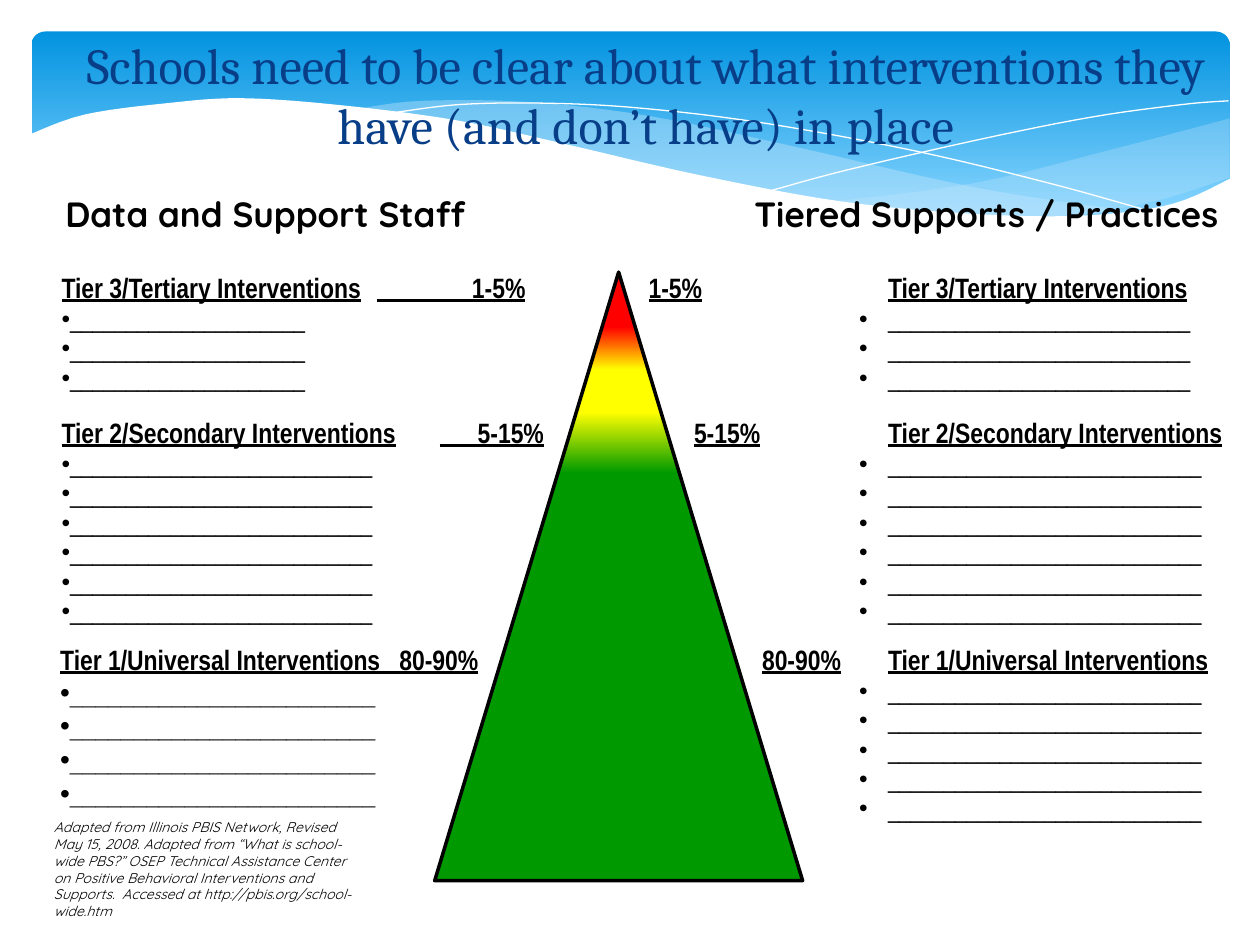
import pptx
import pptx.dml.color
import pptx.enum.shapes
import pptx.enum.text
import pptx.oxml
import pptx.oxml.ns
import pptx.util

COLS, ROWS = 100, 75
ALIGN = pptx.enum.text.PP_ALIGN
KIND = pptx.enum.shapes.MSO_SHAPE
DARK, PALE, WHITE = "000000", "C6E7FC", "FFFFFF"
RED, GOLD, GREEN = "FF0000", "FFFF00", "009900"

deck = pptx.Presentation()
deck.slide_width = pptx.util.Inches(10)
deck.slide_height = pptx.util.Inches(7.5)
UNIT = deck.slide_width / COLS


def emu(*cells):
    """Turn grid cells into slide lengths."""
    return [pptx.util.Emu(round(cell * UNIT)) for cell in cells]


def tint(code):
    """Turn a hex string into a colour."""
    return pptx.dml.color.RGBColor.from_string(code)


def node(home, tag, **attrs):
    """Append a drawing element and return it."""
    item = home.makeelement(pptx.oxml.ns.qn("a:" + tag), attrs)
    home.append(item)
    return item


def paint(shape, fill=None, line=None, width=0, clear=None):
    """Set fill, line and opacity; a tuple of stops is a downward blend."""
    shape.shadow.inherit = False
    if fill is None:
        shape.fill.background()
    elif isinstance(fill, tuple):
        shape.fill.gradient()
        shape.fill.gradient_angle = 270
        for stop, (place, code) in zip(shape.fill.gradient_stops, fill):
            stop.color.rgb = tint(code)
            stop.position = place
    else:
        shape.fill.solid()
        shape.fill.fore_color.rgb = tint(fill)
    if clear:
        code = shape.fill._xPr.find(".//" + pptx.oxml.ns.qn("a:srgbClr"))
        node(code, "alpha", val=str(clear * 1000))
    if line:
        shape.line.color.rgb = tint(line)
        shape.line.width = pptx.util.Pt(width)
    else:
        shape.line.fill.background()
    return shape


def outline(slide, knots, close=True, **look):
    """Draw a painted outline through grid points."""
    spots = [emu(*knot) for knot in knots]
    pen = slide.shapes.build_freeform(*spots[0], scale=1.0)
    pen.add_line_segments(spots[1:], close=close)
    return paint(pen.convert_to_shape(), **look)


def curve(knots, steps=6):
    """Return points on a smooth curve through the knots."""
    ends = [knots[0], *knots, knots[-1]]
    spots = [knots[0]]
    for a, b, c, d in zip(ends, ends[1:], ends[2:], ends[3:]):
        for step in range(1, steps + 1):
            t = step / steps
            spots.append(tuple(
                q + t * ((r - p) + t * ((2 * p - 5 * q + 4 * r - s)
                                        + t * (3 * q - p - 3 * r + s))) / 2
                for p, q, r, s in zip(a, b, c, d)))
    return spots


def write(frame, words, size=16, face="Arial Narrow", ink=DARK, bold=False,
          under=False, slant=False, align=ALIGN.LEFT, lead=0, dot=None, tabs=()):
    """Add one formatted paragraph to a text frame."""
    para = frame.paragraphs[0]
    if para.runs:
        para = frame.add_paragraph()
    para.alignment = align
    para.space_before = pptx.util.Pt(lead)
    run = para.add_run()
    run.text = words
    font = run.font
    font.size, font.name = pptx.util.Pt(size), face
    font.bold, font.underline, font.italic = bold, under, slant
    font.color.rgb = tint(ink)
    props = para._p.get_or_add_pPr()
    if dot:
        left, hang = emu(*dot)
        props.set("marL", str(left))
        props.set("indent", str(-hang))
        node(props, "buFont", typeface="Arial")
        node(props, "buChar", char="•")
    if tabs:
        stops = node(props, "tabLst")
        for tab in emu(*tabs):
            node(stops, "tab", pos=str(tab), algn="l")


def area(slide, box, middle=False):
    """Add a wrapping text box and return its frame."""
    frame = slide.shapes.add_textbox(*emu(*box)).text_frame
    frame.word_wrap = True
    if middle:
        frame.vertical_anchor = pptx.enum.text.MSO_ANCHOR.MIDDLE
    else:
        frame.auto_size = pptx.enum.text.MSO_AUTO_SIZE.SHAPE_TO_FIT_TEXT
    return frame


def banner(slide, box):
    """Draw the blue panel and the waves across it."""
    x, y, w, h = box
    panel = slide.shapes.add_shape(KIND.ROUNDED_RECTANGLE, *emu(*box))
    panel.adjustments[0] = 0.07
    paint(panel, ((0, "0293E0"), (0.9, "83D3FE")))

    def place(knots):
        return [(x + a, y + b) for a, b in curve(knots)]

    outline(slide, place([(w, 6.9), (86, 9.3), (75, 12), (63.6, 13.5)])
            + place([(63.6, 13.5), (72, 14.4), (81, 14.7), (89, 13.5), (w, 11.6)]),
            fill=PALE, clear=29)
    outline(slide, place([(86.8, 14.2), (75, 12.4), (60.4, 9.1), (49, 6.7),
                          (39.5, 5.6), (31, 5.5), (26.1, 6.1)])
            + place([(26.1, 6.1), (33.7, 7.2), (42.4, 9.1), (54, 11.8),
                     (65.5, 13.8), (75, 14.7), (81, 14.7), (86.8, 14.2)]),
            fill=PALE, clear=40)
    for knots in ([(28.4, 6.5), (34, 5.8), (41, 5.7), (48.5, 6.1), (58.3, 7.3),
                   (70.2, 9.5), (80.6, 12), (88.2, 14.1)],
                  [(58.8, 12.6), (64.7, 11), (75.1, 8.6), (84.1, 6.8),
                   (91.3, 5.8), (95, 5.5)]):
        outline(slide, place(knots), close=False, line=WHITE)
    outline(slide, place([(-0.2, 8.2), (4.2, 6.6), (10.7, 5.7), (16.8, 5.3),
                          (25, 5.9), (34, 7.1), (42.2, 8.9), (53, 11.4),
                          (64.3, 13.5), (75.1, 14.5), (83.7, 14.6), (90.5, 13.7),
                          (w + 0.2, 11.6)])
            + [(x + w + 0.2, y + 19.9), (x - 0.2, y + 19.9)], fill=WHITE)


def tier(slide, box, head, count, dash, dot, tabs=(), size=14, bold=False):
    """Write a tier heading with its blank bulleted lines."""
    frame = area(slide, box)
    write(frame, head, bold=True, under=True, tabs=tabs)
    for _ in range(count):
        write(frame, "_" * dash, size=size, bold=bold, dot=dot)


def pyramid(slide, box):
    """Draw the triangle as tiers cut at shares of its height."""
    x, y, w, h = box

    def band(top, base, fill):
        outline(slide, [(x + w * (1 + side * share) / 2, y + h * share)
                        for side, share in ((-1, base), (-1, top), (1, top), (1, base))],
                fill=fill)

    cap = 0.09
    tip = slide.shapes.add_shape(
        KIND.ISOSCELES_TRIANGLE, *emu(x + w * (1 - cap) / 2, y, w * cap, h * cap))
    paint(tip, RED)
    band(0.31, 1, GREEN)
    band(0.23, 0.33, ((0, GOLD), (1, GREEN)))
    band(0.16, 0.23, GOLD)
    band(cap, 0.16, ((0, RED), (1, GOLD)))
    rim = slide.shapes.add_shape(KIND.ISOSCELES_TRIANGLE, *emu(*box))
    paint(rim, line=DARK, width=2)


def main():
    """Build the slide and save it."""
    slide = deck.slides.add_slide(deck.slide_layouts[6])
    banner(slide, (2.5, 2.5, 95.1, 15.6))

    third, second, first = (f"Tier {name} Interventions" for name in
                            ("3/Tertiary", "2/Secondary", "1/Universal"))
    flush, deep = (0, 0), (20, 2.3)
    tier(slide, (3.9, 21, 47.5, 10.7), f"{third}\t{' ' * 15}1-5%", 3, 21, flush)
    tier(slide, (49.5, 21, 47.6, 10.7), f"\t1-5%\t{third}", 3, 27, deep, (1, 20))
    tier(slide, (3.9, 32.5, 40.8, 17.6), f"{second}\t{' ' * 6}5-15%", 6, 27, flush)
    tier(slide, (49.5, 32.5, 50.1, 20), f"\t5-15%\t{second}", 6, 28, deep, (4.6, 20))
    tier(slide, (3.8, 50.5, 38.7, 19.7), f"{first}{' ' * 3}80-90%", 4, 24, flush,
         size=16, bold=True)
    tier(slide, (49.5, 50.5, 47.6, 15.3), f"\t80-90%\t{first}", 5, 28, deep, (10, 20))

    write(area(slide, (2.5, 2.5, 97.5, 10), middle=True),
          "Schools need to be clear about what interventions they have "
          "(and don’t have) in place",
          size=28.8, face="Cambria", ink="073E87", align=ALIGN.CENTER)
    label = dict(size=20, face="Quicksand", bold=True)
    write(area(slide, (4.2, 14.8, 34.2, 4.3)), "Data and Support Staff", **label)
    write(area(slide, (53.3, 14.8, 44.4, 4.3)), "Tiered Supports / Practices",
          align=ALIGN.RIGHT, **label)

    pyramid(slide, (34.5, 21.6, 29.2, 48.3))
    write(area(slide, (3.3, 64.5, 26.7, 9)),
          "Adapted from Illinois PBIS Network, Revised May 15, 2008. Adapted from "
          "“What is school-wide PBS?” OSEP Technical Assistance Center on Positive "
          "Behavioral Interventions and Supports.  Accessed at "
          "http://pbis.org/school-wide.htm",
          size=8, face="Quicksand", slant=True, lead=4)
    deck.save("out.pptx")


if __name__ == "__main__":
    main()
